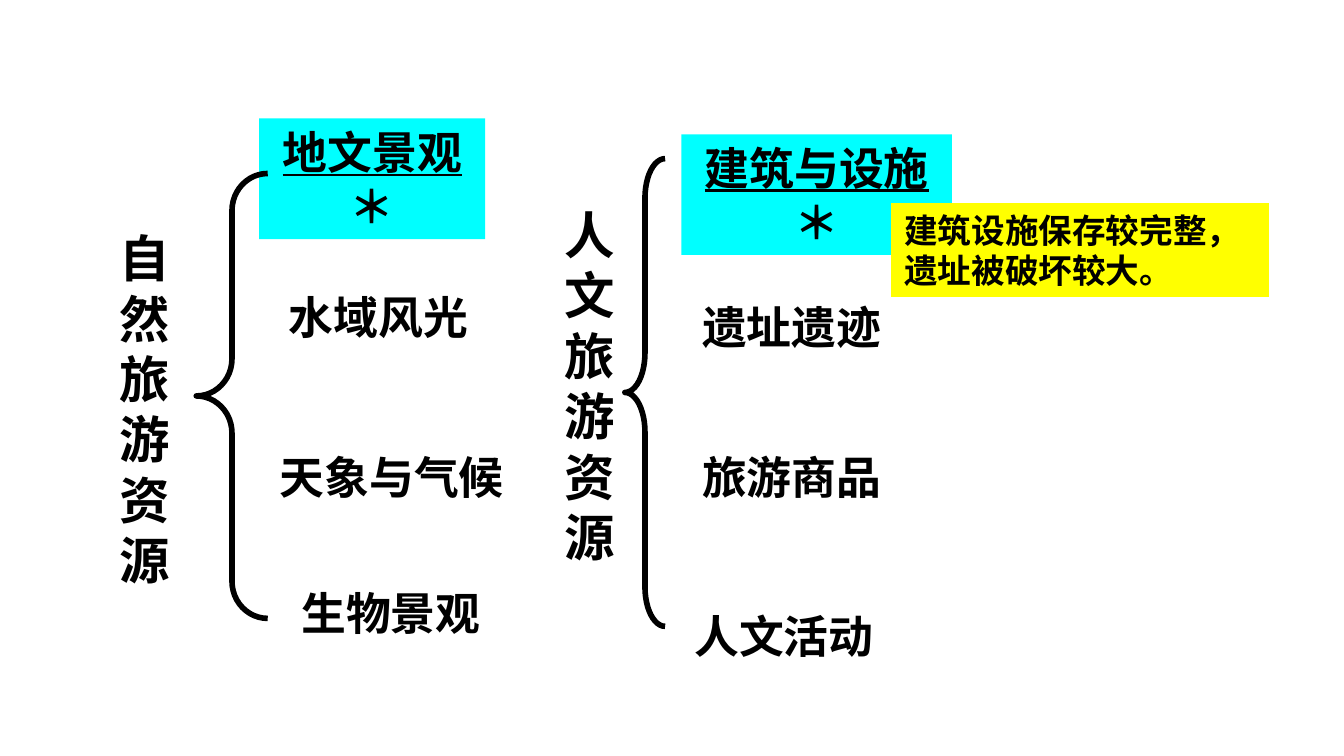
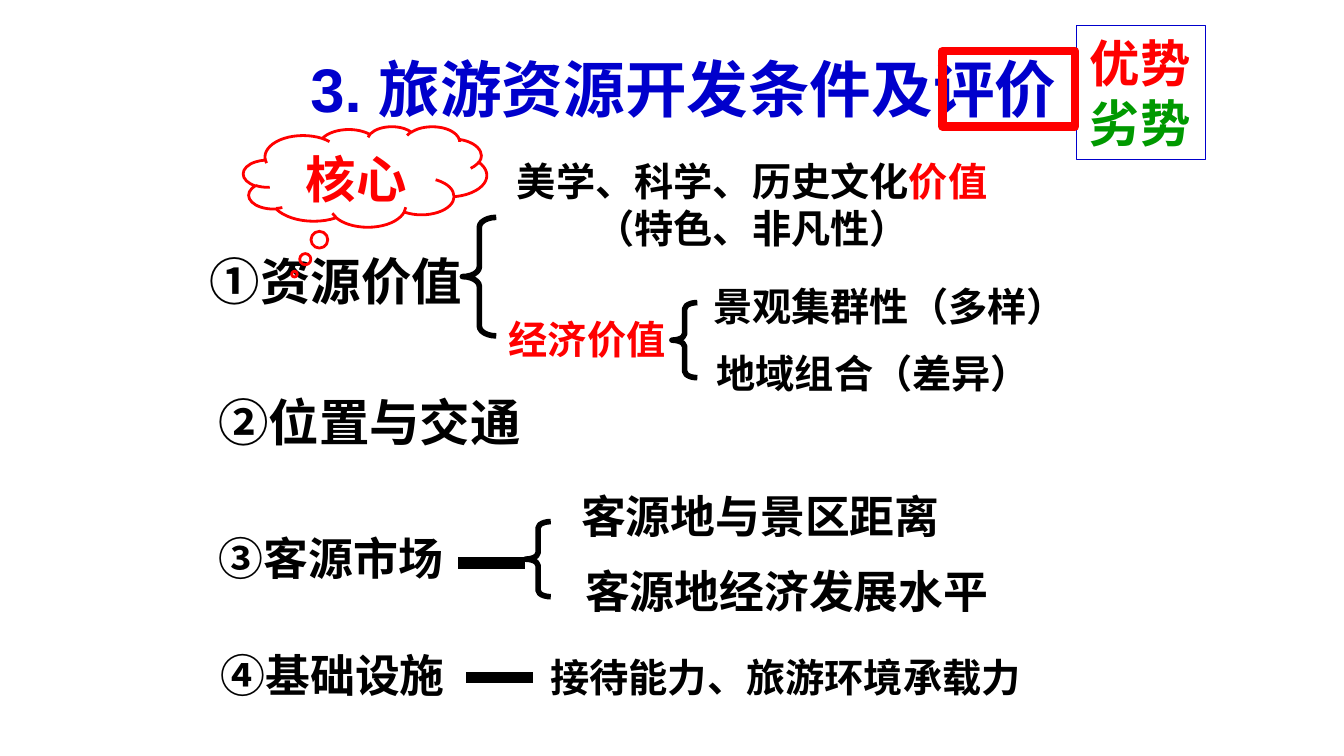
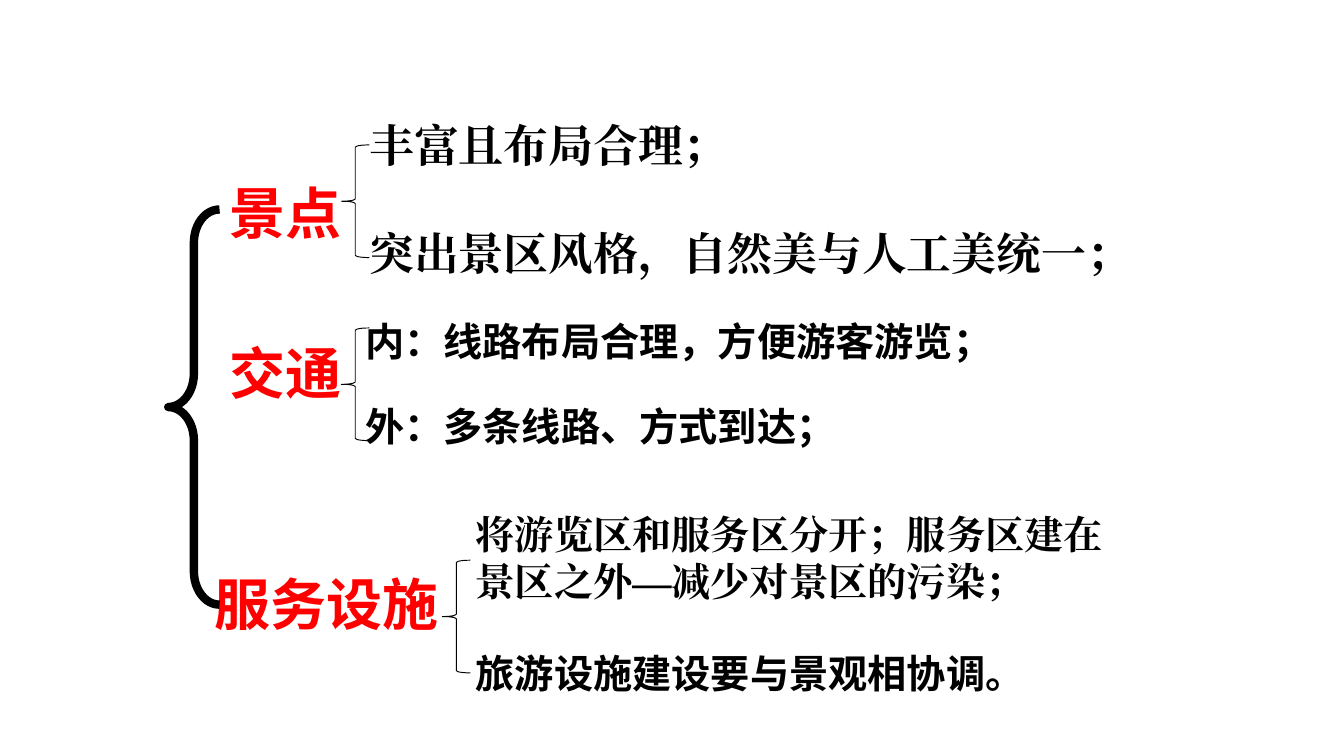
from lxml import etree
from pptx import Presentation
from pptx import util as u
from pptx.dml.color import RGBColor
from pptx.enum import shapes, text
from pptx.oxml.ns import qn

ARIAL, NOTO, TIMES = "Arial", "Noto Sans CJK SC", "Times New Roman"
BLACK, RED, BLUE, GREEN = "000000", "FF0000", "0000CC", "009900"
CYAN, YELLOW = "00FFFF", "FFFF00"
LEADING = 1.2
INSET = 0.25
CENTER, LEFT = text.PP_ALIGN.CENTER, text.PP_ALIGN.LEFT

# Texts: left, top, width, lines, size, paragraphs, format.
# A paragraph is a string or a list of (words, format) spans.
# Braces: left, top, width, height, curl, line width.
UNDERLINED, PLAIN = {"underline": True}, {}
IN_ARIAL = {"font": ARIAL}
NOTO_TEXT = {"font": NOTO}
RED_LABEL = {"color": RED, "align": LEFT, "wrap": False}
LEFT_TEXT = {"align": LEFT}

RESOURCE_TYPES = {
    "texts": [
        (1.75, 4.17, 1.96, 6, 27, ["自然旅游资源"], {}),
        (4.9, 2.24, 4.27, 2, 24, [[("地文景观", UNDERLINED), ("＊", PLAIN)]], {"fill": CYAN}),
        (4.75, 5.36, 4.8, 1, 24, ["水域风光"], {}),
        (4.47, 8.38, 5.87, 1, 24, ["天象与气候"], {}),
        (5.23, 10.95, 4.32, 1, 24, ["生物景观"], {}),
        (10.16, 3.73, 1.96, 6, 27, ["人文旅游资源"], {}),
        (12.88, 2.54, 5.11, 2, 24, [[("建筑与设施", UNDERLINED), ("＊", PLAIN)]], {"fill": CYAN}),
        (12.88, 5.54, 4.17, 1, 24, ["遗址遗迹"], {}),
        (12.88, 8.38, 4.17, 1, 24, ["旅游商品"], {}),
        (12.73, 11.38, 4.17, 1, 24, ["人文活动"], {}),
        (16.84, 3.84, 7.14, 2, 18, ["建筑设施保存较完整，遗址被破坏较大。"],
         {"font": NOTO, "align": LEFT, "fill": YELLOW}),
    ],
    "braces": [(3.71, 3.28, 1.35, 8.41, 0.52, 3), (11.81, 3, 0.76, 8.84, 0.98, 3)],
}

EVALUATION = {
    "texts": [
        (4.29, 0.84, 17.25, 1, 33, [[("3. ", IN_ARIAL), ("旅游资源开发条件及评价", PLAIN)]],
         {"font": NOTO, "color": BLUE}),
        (3.66, 4.6, 5.38, 1, 27, [[("①", IN_ARIAL), ("资源价值", PLAIN)]], NOTO_TEXT),
        (8.74, 2.84, 10.95, 2, 21,
         [[("美学、科学、历史文化", PLAIN), ("价值", {"color": RED})], "（特色、非凡性）"], NOTO_TEXT),
        (12.85, 5.21, 7.92, 1, 21, ["景观集群性（多样）"], NOTO_TEXT),
        (13.18, 6.48, 6.65, 1, 21, ["地域组合（差异）"], NOTO_TEXT),
        (9.04, 5.84, 4.11, 1, 21, ["经济价值"], {"font": NOTO, "color": RED}),
        (3.81, 7.26, 6.35, 1, 27, [[("②", IN_ARIAL), ("位置与交通", PLAIN)]], NOTO_TEXT),
        (3.73, 9.91, 5.05, 1, 24, [[("③", IN_ARIAL), ("客源市场", PLAIN)]], NOTO_TEXT),
        (3.51, 12.12, 5.56, 1, 24, [[("④", IN_ARIAL), ("基础设施", PLAIN)]], NOTO_TEXT),
        (10.41, 9.12, 7.92, 1, 24, ["客源地与景区距离"], NOTO_TEXT),
        (10.31, 10.54, 9.12, 1, 24, ["客源地经济发展水平"], NOTO_TEXT),
        (9.37, 12.22, 10.95, 1, 21, ["接待能力、旅游环境承载力"], NOTO_TEXT),
        (20.35, 0.48, 2.44, 2, 27, ["优势", [("劣势", {"color": GREEN})]],
         {"font": NOTO, "color": RED, "align": LEFT, "wrap": False, "line": BLUE}),
    ],
    "braces": [(8.74, 4.11, 0.64, 2.24, 0.29, 3), (12.7, 5.72, 0.48, 1.42, 0.25, 3),
               (9.93, 9.86, 0.48, 1.42, 0.25, 3)],
}
DASH_LENGTH = 1.27
DASHES = [(8.66, 10.64), (8.81, 12.8)]
CORE_CLOUD = (4.6, 2.39, 4.6, 1.9)
TITLE_FRAME = (17.81, 0.97, 2.51, 1.42)

PLANNING = {
    "texts": [
        (4.09, 3.25, 2.67, 1, 30, ["景点"], RED_LABEL),
        (4.09, 6.27, 2.67, 1, 30, ["交通"], RED_LABEL),
        (3.81, 10.64, 4.8, 1, 30, ["服务设施"], RED_LABEL),
        (6.73, 2.11, 15.09, 3, 24, ["丰富且布局合理；", "突出景区风格，自然美与人工美统一；"],
         {"font": TIMES, "align": LEFT, "gap": 24 * LEADING}),
        (6.65, 5.87, 12.78, 1, 21, ["内：线路布局合理，方便游客游览；"], LEFT_TEXT),
        (6.65, 7.47, 10.54, 1, 21, ["外：多条线路、方式到达；"], LEFT_TEXT),
        (8.74, 9.52, 12.7, 2, 21, ["将游览区和服务区分开；服务区建在景区之外—减少对景区的污染；"],
         {"font": TIMES, "align": LEFT}),
        (8.74, 12.14, 11.35, 1, 21, ["旅游设施建设要与景观相协调。"], {"font": NOTO, "align": LEFT}),
    ],
    "braces": [(3.18, 3.96, 0.97, 7.47, 0.65, 4.5)]
    + [(left, top, 0.53, 2.13, 0.08, 0.5) for left, top in [(6.45, 2.74), (6.45, 6.2), (8.36, 10.59)]],
}


def rgb(value):
    return RGBColor.from_string(value)


def add_outline(page, kind, place, line=None, width=0.75, fill=None):
    """Add a preset shape without shadow; an absent fill or line stays empty."""
    shape = page.shapes.add_shape(kind, *(u.Cm(length) for length in place))
    shape.shadow.inherit = False
    if fill:
        shape.fill.solid()
        shape.fill.fore_color.rgb = rgb(fill)
    else:
        shape.fill.background()
    if line:
        shape.line.color.rgb = rgb(line)
        shape.line.width = u.Pt(width)
    else:
        shape.line.fill.background()
    return shape


def add_span(para, words, size, font, color, underline=False):
    span = para.add_run()
    span.text = words
    values = {"size": u.Pt(size), "bold": True, "name": font, "underline": underline}
    for name, value in values.items():
        setattr(span.font, name, value)
    span.font.color.rgb = rgb(color)
    properties = span.font._element
    properties.set("lang", "zh-CN")
    east_asian = etree.Element(qn("a:ea"), typeface=font)
    properties.find(qn("a:latin")).addnext(east_asian)


def fill_text(box, paragraphs, size, font=ARIAL, color=BLACK, align=CENTER, wrap=True, gap=0):
    frame = box.text_frame
    frame.word_wrap = wrap
    frame.vertical_anchor = text.MSO_ANCHOR.TOP
    for index, spans in enumerate(paragraphs):
        para = frame.add_paragraph() if index else frame.paragraphs[0]
        para.alignment = align
        para.line_spacing = u.Pt(size * LEADING)
        if index and gap:
            para.space_before = u.Pt(gap)
        for words, style in [(spans, {})] if isinstance(spans, str) else spans:
            add_span(para, words, size, **{"font": font, "color": color, **style})


def add_text(page, left, top, width, lines, size, paragraphs, style):
    style = dict(style)
    fill, line = style.pop("fill", None), style.pop("line", None)
    height = lines * u.Pt(size * LEADING).cm + INSET
    place = (left, top, width, height)
    if fill or line:
        box = add_outline(page, shapes.MSO_SHAPE.RECTANGLE, place, line, fill=fill)
    else:
        box = page.shapes.add_textbox(*(u.Cm(length) for length in place))
    fill_text(box, paragraphs, size, **style)


def add_brace(page, left, top, width, height, curl, line_width):
    brace = add_outline(page, shapes.MSO_SHAPE.LEFT_BRACE, (left, top, width, height), BLACK, line_width)
    brace.adjustments[0] = curl


def add_dash(page, left, top):
    dash = page.shapes.add_connector(shapes.MSO_CONNECTOR.STRAIGHT, u.Cm(left), u.Cm(top),
                                     u.Cm(left + DASH_LENGTH), u.Cm(top))
    dash.line.color.rgb = rgb(BLACK)
    dash.line.width = u.Pt(6)
    etree.SubElement(dash._element.spPr, qn("a:effectLst"))


def add_page(deck, content):
    page = deck.slides.add_slide(deck.slide_layouts[6])
    for item in content["texts"]:
        add_text(page, *item)
    for brace in content["braces"]:
        add_brace(page, *brace)
    return page


def add_evaluation_marks(page):
    for dash in DASHES:
        add_dash(page, *dash)
    cloud = add_outline(page, shapes.MSO_SHAPE.CLOUD_CALLOUT, CORE_CLOUD, RED, 1.5)
    cloud.adjustments[0], cloud.adjustments[1] = -0.29, 0.97
    fill_text(cloud, ["核心"], 27, color=RED)
    add_outline(page, shapes.MSO_SHAPE.RECTANGLE, TITLE_FRAME, RED, 4.5)


def main():
    deck = Presentation()
    deck.slide_width, deck.slide_height = u.Cm(25.4), u.Cm(14.29)
    add_page(deck, RESOURCE_TYPES)
    add_evaluation_marks(add_page(deck, EVALUATION))
    add_page(deck, PLANNING)
    deck.save("out.pptx")


if __name__ == "__main__":
    main()
